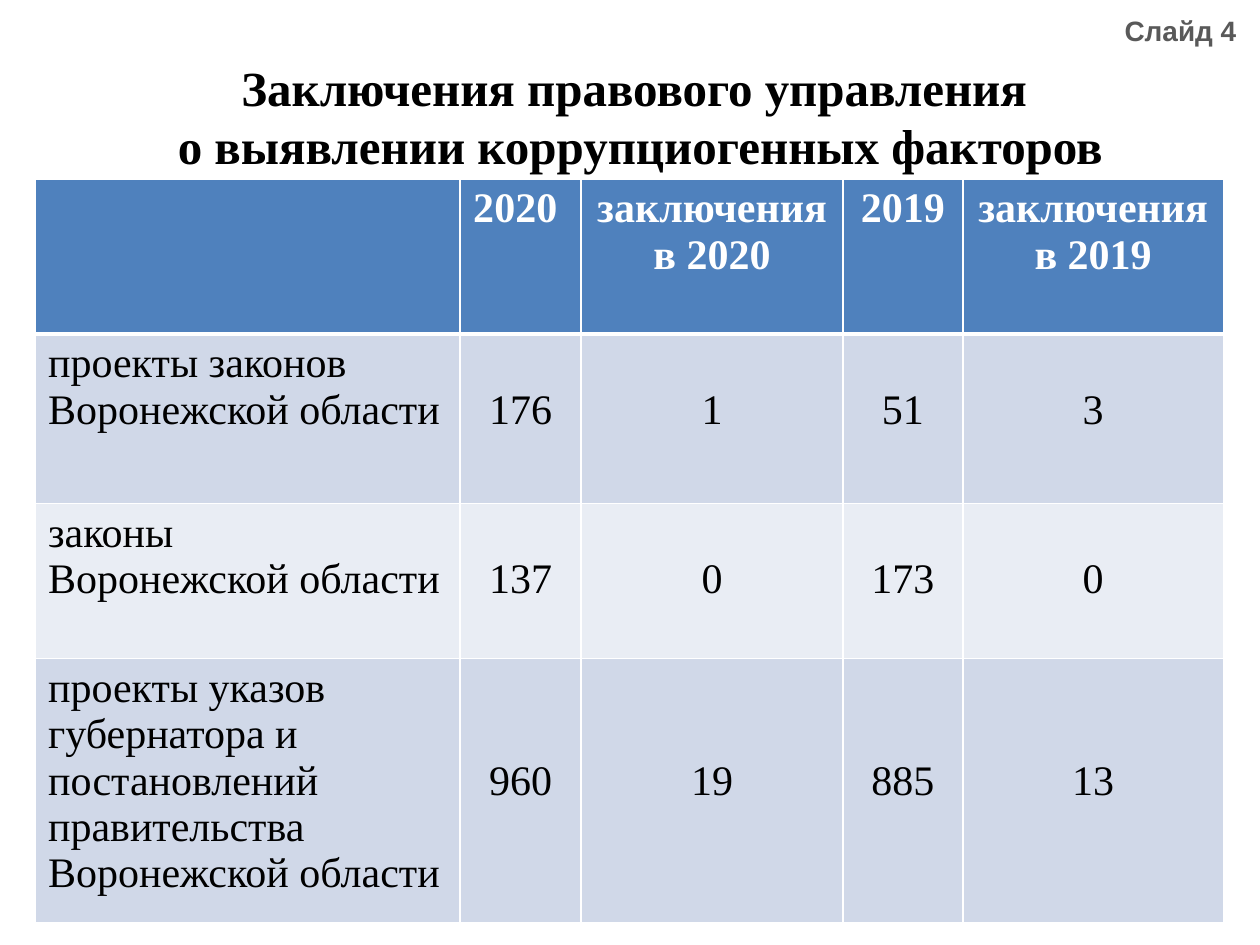
from copy import deepcopy

from lxml.etree import SubElement
from pptx import Presentation
from pptx.dml.color import RGBColor
from pptx.enum.text import MSO_ANCHOR, MSO_AUTO_SIZE, PP_ALIGN
from pptx.oxml.ns import qn
from pptx.util import Pt


def write(tf, text, size=24, font="Times New Roman", color="000000",
          bold=False, align=PP_ALIGN.CENTER, spacing=None):
    """Fill a text frame; a newline starts a paragraph, a vertical tab breaks a line."""
    tf.word_wrap = True
    tf.text = text
    for p in tf.paragraphs:
        p.alignment = align
        p.line_spacing = spacing
        for r in p.runs:
            r.font.size = Pt(size)
            r.font.name = font
            r.font.bold = bold
            r.font.color.rgb = RGBColor.from_string(color)
        for br in p._p.findall(qn("a:br")):
            br.insert(0, deepcopy(p.runs[0]._r.rPr))


def set_border(cell, side, width, color="FFFFFF"):
    ln = SubElement(cell._tc.get_or_add_tcPr(), qn(f"a:ln{side}"), w=str(Pt(width)))
    SubElement(SubElement(ln, qn("a:solidFill")), qn("a:srgbClr"), val=color)


prs = Presentation()
prs.slide_width, prs.slide_height = Pt(720), Pt(540)
s = prs.slides.add_slide(prs.slide_layouts[5])

# Title
title = s.shapes.title
title.left, title.top, title.width, title.height = Pt(41.8), Pt(31), Pt(648), Pt(85)
tf = title.text_frame
tf.auto_size = MSO_AUTO_SIZE.NONE
tf.vertical_anchor = MSO_ANCHOR.TOP
write(tf, "Заключения правового управления \vо выявлении коррупциогенных факторов",
      size=28, bold=True, spacing=0.98)

# Table
rows = [
    ["", "2020 ", "заключения в 2020", "2019", "заключения в 2019"],
    ["проекты законов Воронежской области", "176", "1", "51", "3"],
    ["законы\nВоронежской области", "137", "0", "173", "0"],
    ["проекты указов губернатора и постановлений правительства Воронежской области",
     "960", "19", "885", "13"],
]
col_widths = [242.6, 69.1, 149.8, 68.4, 149]
row_heights = [88.5, 97, 88.5, 151]
row_fills = ["4F81BD", "D0D8E8", "E9EDF4", "D0D8E8"]
lines_above = [0, 1, 1, 2]  # how many text lines the figures sit below the cell top
line_height = 26.6

table = s.shapes.add_table(len(rows), len(col_widths), Pt(20.3), Pt(102.3),
                           Pt(sum(col_widths)), Pt(sum(row_heights))).table
for col, width in zip(table.columns, col_widths):
    col.width = Pt(width)
for i, values in enumerate(rows):
    table.rows[i].height = Pt(row_heights[i])
    header = i == 0
    for j, value in enumerate(values):
        cell = table.cell(i, j)
        for side in "LRTB":
            heavy = (i, side) in [(0, "B"), (1, "T")]
            set_border(cell, side, 3 if heavy else 1)
        cell.fill.solid()
        cell.fill.fore_color.rgb = RGBColor.from_string(row_fills[i])
        label = j == 0
        if not label:
            cell.margin_top = Pt(3.6 + lines_above[i] * line_height)
        write(cell.text_frame, value, bold=header,
              color="FFFFFF" if header else "000000",
              align=PP_ALIGN.LEFT if label else PP_ALIGN.CENTER)

# Slide label
label_box = s.shapes.add_textbox(Pt(618.5), Pt(4.3), Pt(95), Pt(26.6))
write(label_box.text_frame, "Слайд 4", size=16, font="Arial", color="595959",
      bold=True, align=PP_ALIGN.RIGHT)

prs.save("out.pptx")
